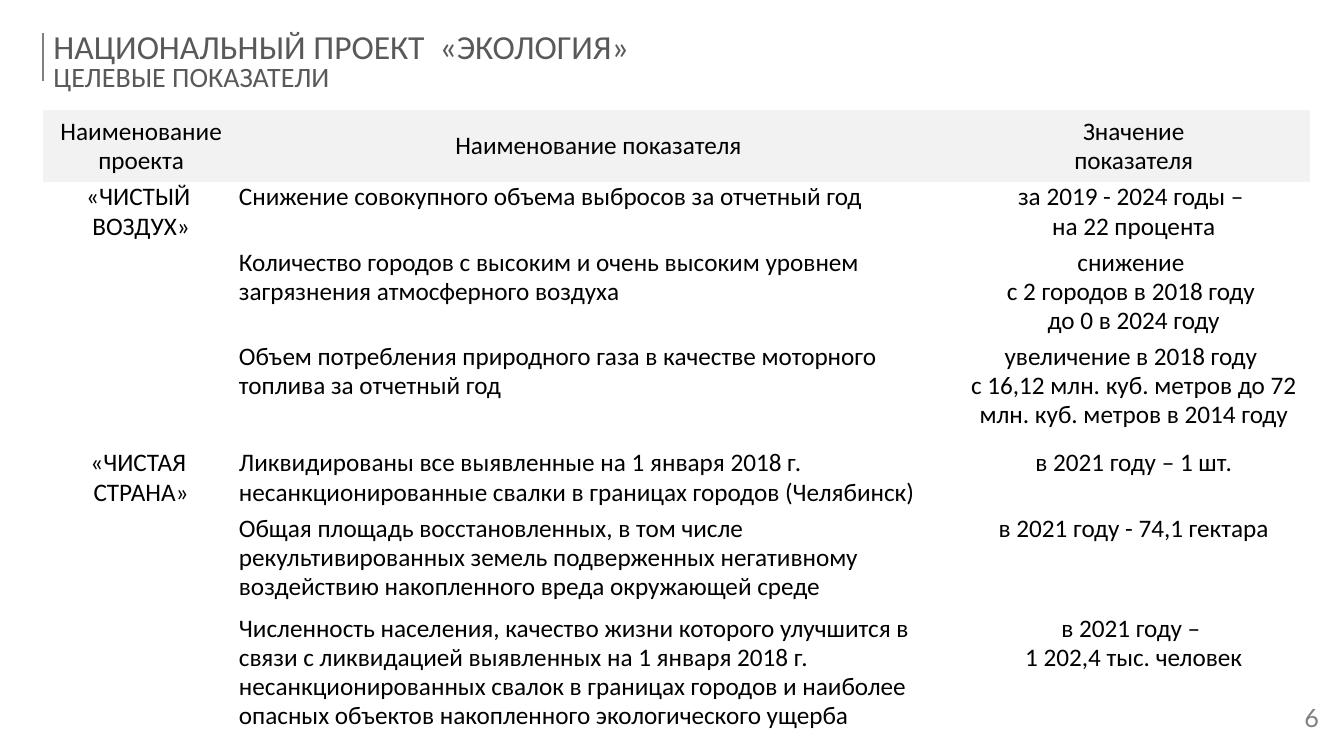
import lxml.etree
import pptx
import pptx.util
import pptx.dml.color
import pptx.enum.shapes
import pptx.enum.text
import pptx.oxml.ns

Inches = pptx.util.Inches
Pt = pptx.util.Pt
RGBColor = pptx.dml.color.RGBColor
PP_ALIGN = pptx.enum.text.PP_ALIGN
MSO_ANCHOR = pptx.enum.text.MSO_ANCHOR
qn = pptx.oxml.ns.qn

BLACK = RGBColor(0x00, 0x00, 0x00)
DARK = RGBColor(0x59, 0x59, 0x59)
GRAY = RGBColor(0x80, 0x80, 0x80)
LIGHT = RGBColor(0xF2, 0xF2, 0xF2)

TITLE = "НАЦИОНАЛЬНЫЙ ПРОЕКТ  «ЭКОЛОГИЯ»\nЦЕЛЕВЫЕ ПОКАЗАТЕЛИ"
TITLE_SIZES = [24, 20]
PAGE = "6"
HEADER = ("Наименование проекта", "Наименование показателя", "Значение\nпоказателя")
PROJECTS = [
    ("«ЧИСТЫЙ \nВОЗДУХ»", [
        ("Снижение совокупного объема выбросов за отчетный год",
         "за 2019 - 2024 годы – \nна 22 процента"),
        ("Количество городов с высоким и очень высоким уровнем загрязнения атмосферного воздуха",
         "снижение \nс 2 городов в 2018 году \nдо 0 в 2024 году"),
        ("Объем потребления природного газа в качестве моторного топлива за отчетный год",
         "увеличение в 2018 году \nс 16,12 млн. куб. метров до 72 млн. куб. метров в 2014 году"),
    ]),
    ("«ЧИСТАЯ \nСТРАНА»", [
        ("Ликвидированы все выявленные на 1 января 2018 г. несанкционированные свалки "
         "в границах городов (Челябинск)",
         "в 2021 году – 1 шт."),
        ("Общая площадь восстановленных, в том числе рекультивированных земель подверженных "
         "негативному воздействию накопленного вреда окружающей среде",
         "в 2021 году - 74,1 гектара"),
        ("Численность населения, качество жизни которого улучшится в связи с ликвидацией "
         "выявленных на 1 января 2018 г. несанкционированных свалок в границах городов "
         "и наиболее опасных объектов накопленного экологического ущерба",
         "в 2021 году – \n1 202,4 тыс. человек"),
    ]),
]
COL_WIDTHS = [1.94, 7.13, 3.49]
ROW_HEIGHTS = [0.72, 0.65, 0.93, 1.06, 0.65, 0.99, 1.14]
NO_GRID_STYLE = "{2D5ABB26-0587-4C30-8999-92F81FD0307C}"
LEFT = 0.43
TOP = 0.33


def format_paragraph(p, size, color, font, align, spacing):
    p.alignment = align
    p.line_spacing = spacing
    p.space_before = p.space_after = Pt(0)
    for r in p.runs:
        r.font.size = Pt(size)
        r.font.name = font
        r.font.color.rgb = color


def fill_cell(cell, text, align, header=False):
    cell.margin_left = cell.margin_right = cell.margin_top = cell.margin_bottom = 0
    cell.vertical_anchor = MSO_ANCHOR.MIDDLE if header else MSO_ANCHOR.TOP
    if header:
        cell.fill.solid()
        cell.fill.fore_color.rgb = LIGHT
    else:
        cell.fill.background()
    cell.text_frame.text = text
    for p in cell.text_frame.paragraphs:
        format_paragraph(p, 18, BLACK, "Calibri", align, 0.95)


prs = pptx.Presentation()
prs.slide_width = Inches(13.33)
prs.slide_height = Inches(7.5)
s = prs.slides.add_slide(prs.slide_layouts[5])

title = s.shapes.title
title.left, title.top = Inches(LEFT), Inches(TOP)
title.width, title.height = Inches(12.39), Inches(0.6)
tf = title.text_frame
tf.word_wrap = True
tf.auto_size = pptx.enum.text.MSO_AUTO_SIZE.NONE
tf.margin_top = tf.margin_bottom = 0
tf.vertical_anchor = MSO_ANCHOR.MIDDLE
tf.text = TITLE
for p, size in zip(tf.paragraphs, TITLE_SIZES):
    format_paragraph(p, size, DARK, "Calibri", PP_ALIGN.LEFT, 0.8)

rule = s.shapes.add_connector(pptx.enum.shapes.MSO_CONNECTOR.STRAIGHT,
                              Inches(LEFT), Inches(TOP), Inches(LEFT), Inches(0.8))
rule.line.color.rgb = GRAY
rule.line.width = Pt(1.5)
lxml.etree.SubElement(rule._element.spPr, qn("a:effectLst"))

frame = s.shapes.add_table(len(ROW_HEIGHTS), len(COL_WIDTHS), Inches(LEFT), Inches(1.09),
                           Inches(sum(COL_WIDTHS)), Inches(sum(ROW_HEIGHTS)))
table = frame.table
table.first_row = False
table.horz_banding = False
table._tbl.tblPr.find(qn("a:tableStyleId")).text = NO_GRID_STYLE
for column, width in zip(table.columns, COL_WIDTHS):
    column.width = Inches(width)
for row, height in zip(table.rows, ROW_HEIGHTS):
    row.height = Inches(height)

for c, text in enumerate(HEADER):
    fill_cell(table.cell(0, c), text, PP_ALIGN.CENTER, header=True)
row = 1
for project, indicators in PROJECTS:
    table.cell(row, 0).merge(table.cell(row + len(indicators) - 1, 0))
    fill_cell(table.cell(row, 0), project, PP_ALIGN.CENTER)
    for indicator, value in indicators:
        fill_cell(table.cell(row, 1), indicator, PP_ALIGN.LEFT)
        fill_cell(table.cell(row, 2), value, PP_ALIGN.CENTER)
        row += 1

number = s.shapes.add_textbox(Inches(12.43), Inches(6.9), Inches(1.16), Inches(0.5))
tf = number.text_frame
tf.word_wrap = True
tf.vertical_anchor = MSO_ANCHOR.MIDDLE
tf.text = PAGE
format_paragraph(tf.paragraphs[0], 18, GRAY, "Lato", PP_ALIGN.CENTER, 0.8)

prs.save("out.pptx")
